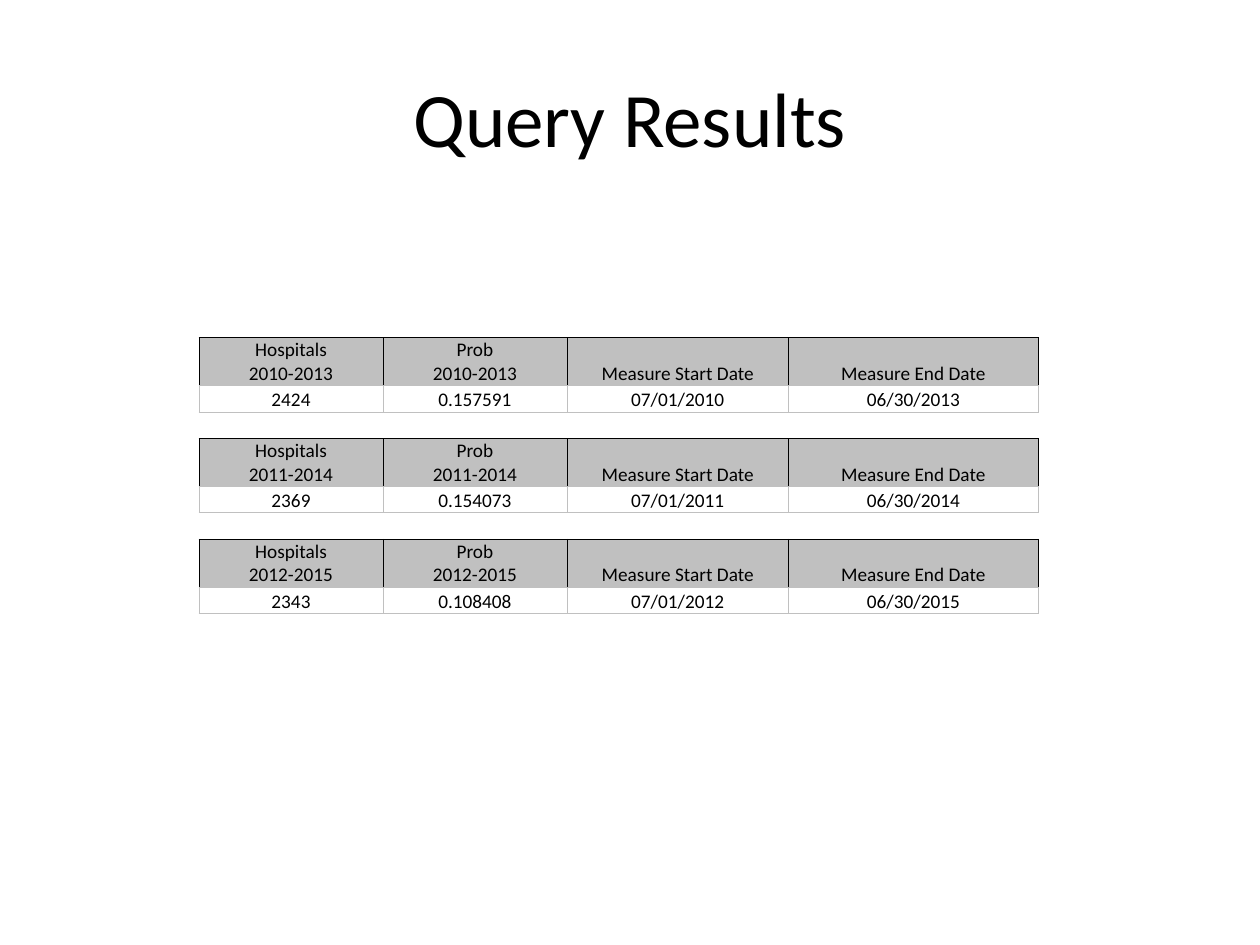
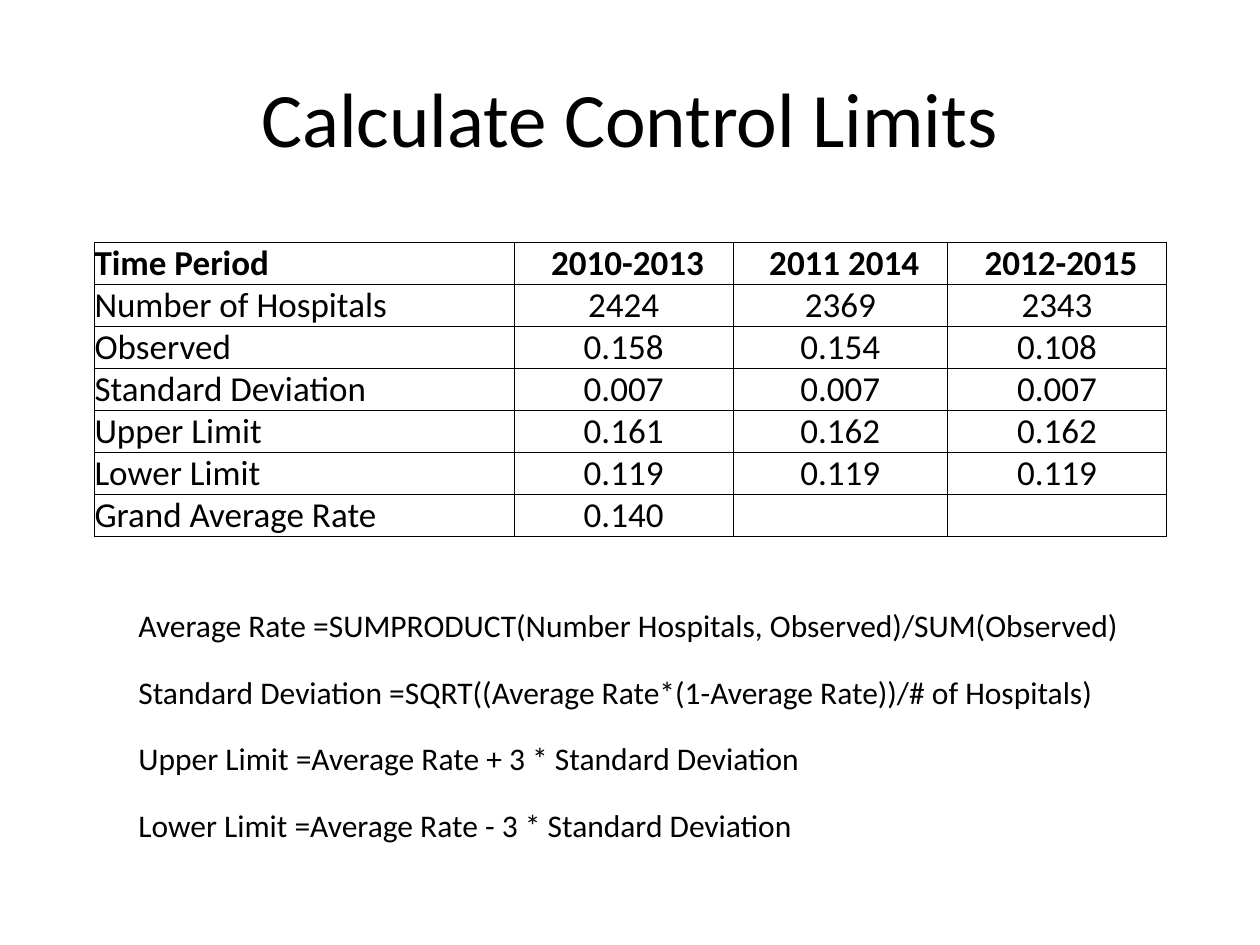
from lxml.etree import SubElement
from pptx import Presentation
from pptx.dml.color import RGBColor
from pptx.enum.text import MSO_ANCHOR, MSO_AUTO_SIZE, PP_ALIGN
from pptx.oxml.ns import qn
from pptx.util import Inches, Pt

FONT = "Calibri"
BLACK = "000000"
GRAY = "C0C0C0"
TITLE_SIZE = 44
FORMULA_SIZE = 18
BORDER_WIDTH = Pt(0.5)

ALL_BLACK = {"L": BLACK, "R": BLACK, "T": BLACK, "B": BLACK}
ALL_GRAY = {"L": GRAY, "R": GRAY, "T": GRAY, "B": GRAY}
HEADER_BORDERS = {**ALL_BLACK, "B": GRAY}
GAP_BORDERS = {"T": GRAY, "B": BLACK}

QUERY_PERIODS = [
    (2010, "2424", "0.157591"),
    (2011, "2369", "0.154073"),
    (2012, "2343", "0.108408"),
]

CONTROL_LIMITS = [
    ["Time Period", " 2010-2013", " 2011 2014", " 2012-2015"],
    ["Number of Hospitals", "2424", "2369", "2343"],
    ["Observed", "0.158", "0.154", "0.108"],
    ["Standard Deviation", "0.007", "0.007", "0.007"],
    ["Upper Limit", "0.161", "0.162", "0.162"],
    ["Lower Limit", "0.119", "0.119", "0.119"],
    ["Grand Average Rate", "0.140", "", ""],
]

FORMULAS = [
    ("Average Rate =SUMPRODUCT(Number Hospitals, Observed)/SUM(Observed)", 8.29),
    ("Standard Deviation =SQRT((Average Rate*(1-Average Rate))/# of Hospitals)", 8.13),
    ("Upper Limit =Average Rate + 3 * Standard Deviation", 5.51),
    ("Lower Limit =Average Rate - 3 * Standard Deviation", 5.58),
]


def color(value):
    return RGBColor.from_string(value)


def write_text(frame, text, size, alignment=PP_ALIGN.LEFT, bold=False):
    for index, line in enumerate(text.split("\n")):
        paragraph = frame.add_paragraph() if index else frame.paragraphs[0]
        paragraph.alignment = alignment
        if not line:
            SubElement(paragraph._p, qn("a:endParaRPr"), sz=str(size * 100))
            continue
        run = paragraph.add_run()
        run.text = line
        run.font.name = FONT
        run.font.size = Pt(size)
        run.font.bold = bold
        run.font.color.rgb = color(BLACK)


def add_text_box(slide, left, top, width, height):
    return slide.shapes.add_textbox(
        Inches(left), Inches(top), Inches(width), Inches(height)
    ).text_frame


def add_titled_slide(presentation, title):
    slide = presentation.slides.add_slide(presentation.slide_layouts[6])
    frame = add_text_box(slide, 0.5, 0.3, 9, 1.25)
    frame.word_wrap = True
    frame.vertical_anchor = MSO_ANCHOR.MIDDLE
    write_text(frame, title, TITLE_SIZE, PP_ALIGN.CENTER)
    return slide


def add_formula(slide, top, text, width):
    frame = add_text_box(slide, 1, top, width, 0.4)
    frame.word_wrap = False
    frame.auto_size = MSO_AUTO_SIZE.SHAPE_TO_FIT_TEXT
    write_text(frame, text, FORMULA_SIZE)


def add_plain_table(slide, left, top, column_widths, row_heights):
    table = slide.shapes.add_table(
        len(row_heights), len(column_widths), Inches(left), Inches(top),
        Inches(sum(column_widths)), Inches(sum(row_heights)),
    ).table
    table.first_row = False
    table.horz_banding = False
    for column, width in zip(table.columns, column_widths):
        column.width = Inches(width)
    for row, height in zip(table.rows, row_heights):
        row.height = Inches(height)
    return table


def set_borders(cell, borders):
    properties = cell._tc.get_or_add_tcPr()
    for side in "LRTB":
        line = SubElement(properties, qn(f"a:ln{side}"), w=str(BORDER_WIDTH))
        if side in borders:
            fill = SubElement(line, qn("a:solidFill"))
            SubElement(fill, qn("a:srgbClr"), val=borders[side])
        else:
            SubElement(line, qn("a:noFill"))


def fill_cell(cell, text, size, borders, background=None,
              alignment=PP_ALIGN.CENTER, bold=False):
    cell.margin_left = cell.margin_right = 0
    cell.margin_top = cell.margin_bottom = 0
    cell.vertical_anchor = MSO_ANCHOR.BOTTOM
    set_borders(cell, borders)
    if background:
        cell.fill.solid()
        cell.fill.fore_color.rgb = color(background)
    else:
        cell.fill.background()
    write_text(cell.text_frame, text, size, alignment, bold)


def query_rows():
    rows = []
    for start, hospitals, probability in QUERY_PERIODS:
        end = start + 3
        period = f"{start}-{end}"
        if rows:
            rows.append(([""] * 4, 0.21, GAP_BORDERS, None))
        headers = [f"Hospitals\n{period}", f"Prob\n{period}",
                   "Measure Start Date", "Measure End Date"]
        values = [hospitals, probability, f"07/01/{start}", f"06/30/{end}"]
        rows.append((headers, 0.38, HEADER_BORDERS, GRAY))
        rows.append((values, 0.21, ALL_GRAY, None))
    return rows


def add_query_table(slide):
    rows = query_rows()
    table = add_plain_table(slide, 1.58, 2.68, [1.46, 1.46, 1.76, 1.98],
                            [height for _, height, _, _ in rows])
    for row, (texts, _, borders, background) in zip(table.rows, rows):
        for cell, text in zip(row.cells, texts):
            fill_cell(cell, text, 11, borders, background)


def add_limits_table(slide):
    table = add_plain_table(slide, 0.75, 1.92, [3.33, 1.74, 1.7, 1.74],
                            [0.33] * len(CONTROL_LIMITS))
    for row_index, texts in enumerate(CONTROL_LIMITS):
        for column_index, text in enumerate(texts):
            alignment = PP_ALIGN.CENTER if column_index else PP_ALIGN.LEFT
            fill_cell(table.cell(row_index, column_index), text, 20, ALL_BLACK,
                      alignment=alignment, bold=row_index == 0)


def main():
    presentation = Presentation()
    presentation.slide_width = Inches(10)
    presentation.slide_height = Inches(7.5)

    add_query_table(add_titled_slide(presentation, "Query Results"))

    limits_slide = add_titled_slide(presentation, "Calculate Control Limits")
    add_limits_table(limits_slide)
    for index, (text, width) in enumerate(FORMULAS):
        add_formula(limits_slide, 4.76 + 0.53 * index, text, width)

    presentation.save("out.pptx")


if __name__ == "__main__":
    main()
